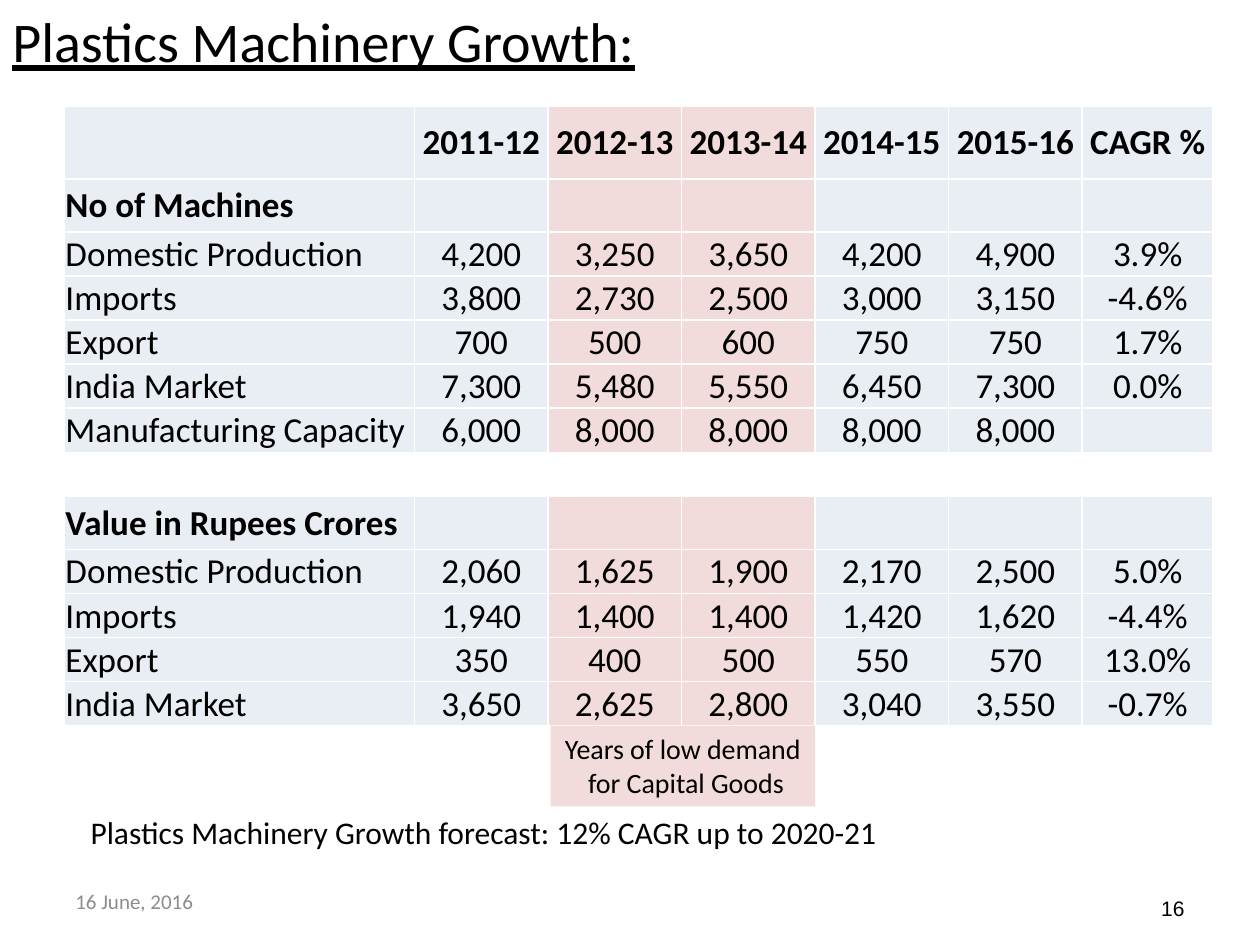
import pptx
import pptx.util
import pptx.dml.color
import pptx.enum.shapes
import pptx.enum.text
import pptx.oxml
import pptx.oxml.ns

Inches = pptx.util.Inches
ALIGN = pptx.enum.text.PP_ALIGN
ANCHOR = pptx.enum.text.MSO_ANCHOR

BLUE, PINK, WHITE = "E9EDF4", "F2DCDB", "FFFFFF"
HEADER = ["", "2011-12", "2012-13", "2013-14", "2014-15", "2015-16", "CAGR %"]
SECTIONS = [
    ("No of Machines", [
        ["Domestic Production", "4,200", "3,250", "3,650", "4,200", "4,900", "3.9%"],
        ["Imports", "3,800", "2,730", "2,500", "3,000", "3,150", "-4.6%"],
        ["Export", "700", "500", "600", "750", "750", "1.7%"],
        ["India Market", "7,300", "5,480", "5,550", "6,450", "7,300", "0.0%"],
        ["Manufacturing Capacity", "6,000", "8,000", "8,000", "8,000", "8,000", ""],
    ]),
    ("Value in Rupees Crores", [
        ["Domestic Production", "2,060", "1,625", "1,900", "2,170", "2,500", "5.0%"],
        ["Imports", "1,940", "1,400", "1,400", "1,420", "1,620", "-4.4%"],
        ["Export", "350", "400", "500", "550", "570", "13.0%"],
        ["India Market", "3,650", "2,625", "2,800", "3,040", "3,550", "-0.7%"],
    ]),
]
COLUMN_WIDTHS = [2.78] + [1.06] * 5 + [1.04]
LOW_DEMAND_COLUMNS = (2, 3)
ROW_HEIGHTS = {"header": 0.58, "section": 0.42, "data": 0.35, "gap": 0.35}
TEXT_BOXES = [
    ("16", (7.17, 7.08, 2.33, 0.25),
     dict(size=12, font="Arial", align=ALIGN.RIGHT, anchor=ANCHOR.MIDDLE)),
    ("Plastics Machinery Growth:", (0, 0, 10, 0.75), dict(size=32, underline=True)),
    ("16 June, 2016", (0.5, 6.95, 2.33, 0.4),
     dict(size=12, color="8C8C8C", anchor=ANCHOR.MIDDLE)),
    ("Plastics Machinery Growth forecast: 12% CAGR up to 2020-21",
     (0.62, 6.4, 7.11, 0.4), dict(size=18)),
]
CALLOUT = "Years of low demand\n for Capital Goods"


def rgb(color):
    return pptx.dml.color.RGBColor.from_string(color)


def write(frame, text, size=20, font="Calibri", color="000000", bold=False,
          underline=False, align=ALIGN.LEFT, anchor=ANCHOR.TOP, wrap=True):
    frame.word_wrap = wrap
    frame.vertical_anchor = anchor
    frame.text = text
    for paragraph in frame.paragraphs:
        paragraph.alignment = align
        for run in paragraph.runs:
            run.font.size = pptx.util.Pt(size)
            run.font.name = font
            run.font.color.rgb = rgb(color)
            run.font.bold = bold
            run.font.underline = underline


def add_borders(cell, color):
    properties = cell._tc.get_or_add_tcPr()
    for side in ("lnL", "lnR", "lnT", "lnB"):
        properties.append(pptx.oxml.parse_xml(
            f'<a:{side} {pptx.oxml.ns.nsdecls("a")} w="12700"><a:solidFill>'
            f'<a:srgbClr val="{color}"/></a:solidFill></a:{side}>'))


def table_rows():
    rows = [("header", HEADER)]
    for index, (title, data) in enumerate(SECTIONS):
        if index:
            rows.append(("gap", [""] * len(HEADER)))
        rows.append(("section", [title] + [""] * (len(HEADER) - 1)))
        rows.extend(("data", values) for values in data)
    return rows


def add_growth_table(slide):
    rows = table_rows()
    height = sum(ROW_HEIGHTS[kind] for kind, _ in rows)
    table = slide.shapes.add_table(
        len(rows), len(HEADER), Inches(0.51), Inches(0.84),
        Inches(sum(COLUMN_WIDTHS)), Inches(height)).table
    table.first_row = False
    table.horz_banding = False
    for column, width in zip(table.columns, COLUMN_WIDTHS):
        column.width = Inches(width)
    for row, (kind, values) in zip(table.rows, rows):
        row.height = Inches(ROW_HEIGHTS[kind])
        for index, (cell, value) in enumerate(zip(row.cells, values)):
            cell.margin_left = cell.margin_right = cell.margin_top = Inches(0.01)
            cell.margin_bottom = 0
            cell.vertical_anchor = ANCHOR.MIDDLE
            add_borders(cell, WHITE)
            if kind == "gap":
                cell.fill.background()
            else:
                cell.fill.solid()
                cell.fill.fore_color.rgb = rgb(PINK if index in LOW_DEMAND_COLUMNS else BLUE)
            if value:
                write(cell.text_frame, value, bold=kind != "data",
                      align=ALIGN.CENTER if index else ALIGN.LEFT)


def add_callout(slide):
    shape = slide.shapes.add_shape(
        pptx.enum.shapes.MSO_SHAPE.RECTANGLE,
        Inches(4.37), Inches(5.76), Inches(2.1), Inches(0.64))
    shape.shadow.inherit = False
    shape.fill.solid()
    shape.fill.fore_color.rgb = rgb(PINK)
    shape.line.fill.background()
    write(shape.text_frame, CALLOUT, size=16, align=ALIGN.CENTER, wrap=False)


def main():
    presentation = pptx.Presentation()
    presentation.slide_width = Inches(10)
    presentation.slide_height = Inches(7.5)
    slide = presentation.slides.add_slide(presentation.slide_layouts[6])
    for text, box, style in TEXT_BOXES:
        shape = slide.shapes.add_textbox(*map(Inches, box))
        write(shape.text_frame, text, **style)
    add_growth_table(slide)
    add_callout(slide)
    presentation.save("out.pptx")


if __name__ == "__main__":
    main()
